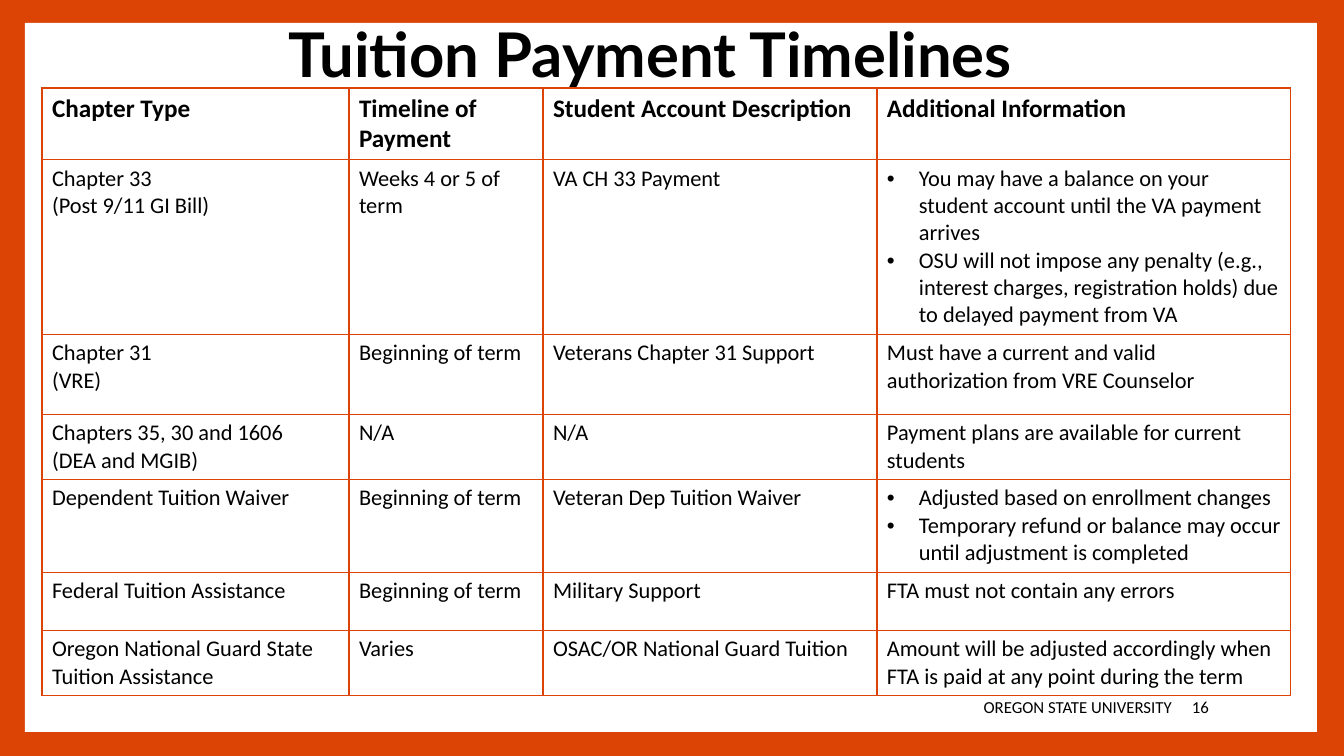
from lxml.etree import SubElement
from pptx import Presentation
from pptx.dml.color import RGBColor
from pptx.enum.shapes import MSO_SHAPE
from pptx.enum.text import MSO_ANCHOR, PP_ALIGN
from pptx.oxml.ns import qn
from pptx.util import Emu, Pt

EMU_PER_PX = 12192000 / 1344
COLORS = {"orange": "DC4405", "white": "FFFFFF", "black": "000000"}
COLUMN_WIDTHS = [307, 194, 334, 414]
ROW_HEIGHTS = [71, 175, 80, 64, 93, 58, 65]
ROWS = [
    ["Chapter Type", "Timeline of Payment", "Student Account Description", "Additional Information"],
    ["Chapter 33\n(Post 9/11 GI Bill)", "Weeks 4 or 5 of term", "VA CH 33 Payment",
     ["You may have a balance on your student account until the VA payment arrives",
      "OSU will not impose any penalty (e.g., interest charges, registration holds) "
      "due to delayed payment from VA"]],
    ["Chapter 31\n(VRE)", "Beginning of term", "Veterans Chapter 31 Support",
     "Must have a current and valid authorization from VRE Counselor"],
    ["Chapters 35, 30 and 1606\n(DEA and MGIB)", "N/A", "N/A",
     "Payment plans are available for current students"],
    ["Dependent Tuition Waiver", "Beginning of term", "Veteran Dep Tuition Waiver",
     ["Adjusted based on enrollment changes",
      "Temporary refund or balance may occur until adjustment is completed"]],
    ["Federal Tuition Assistance", "Beginning of term", "Military Support",
     "FTA must not contain any errors"],
    ["Oregon National Guard State Tuition Assistance", "Varies", "OSAC/OR National Guard Tuition",
     "Amount will be adjusted accordingly when FTA is paid at any point during the term"],
]


def px(length):
    return Emu(round(length * EMU_PER_PX))


def color(name):
    return RGBColor.from_string(COLORS[name])


def format_runs(paragraph, size, font="Calibri", bold=False):
    for run in paragraph.runs:
        run.font.name = font
        run.font.size = Pt(size)
        run.font.bold = bold
        run.font.color.rgb = color("black")


def add_bullet(paragraph):
    properties = paragraph._p.get_or_add_pPr()
    properties.set("marL", str(px(32)))
    properties.set("indent", str(-px(32)))
    SubElement(properties, qn("a:buFont"), typeface="Arial")
    SubElement(properties, qn("a:buChar"), char="•")


def add_borders(cell):
    properties = cell._tc.get_or_add_tcPr()
    for position, side in enumerate(("lnL", "lnR", "lnT", "lnB")):
        line = properties.makeelement(qn(f"a:{side}"), {"w": str(Pt(1))})
        fill = SubElement(line, qn("a:solidFill"))
        SubElement(fill, qn("a:srgbClr"), val=COLORS["orange"])
        properties.insert(position, line)


def add_frame(slide, left, top, width, height):
    slide.background.fill.solid()
    slide.background.fill.fore_color.rgb = color("orange")
    panel = slide.shapes.add_shape(MSO_SHAPE.RECTANGLE, px(left), px(top), px(width), px(height))
    panel.shadow.inherit = False
    panel.fill.solid()
    panel.fill.fore_color.rgb = color("white")
    panel.line.fill.background()
    slide.shapes._spTree.insert(2, panel._element)


def place_title(slide, left, top, width, height):
    title = slide.shapes.title
    title.left, title.top, title.width, title.height = map(px, (left, top, width, height))
    title.text_frame.text = "Tuition Payment Timelines"
    title.text_frame.vertical_anchor = MSO_ANCHOR.MIDDLE
    paragraph = title.text_frame.paragraphs[0]
    paragraph.alignment = PP_ALIGN.CENTER
    paragraph.line_spacing = 0.9
    format_runs(paragraph, 44, "Lato", True)


def fill_cell(cell, content, is_header):
    bulleted = isinstance(content, list)
    cell.text_frame.text = "\n".join(content) if bulleted else content
    cell.fill.background()
    add_borders(cell)
    for paragraph in cell.text_frame.paragraphs:
        if bulleted:
            add_bullet(paragraph)
        format_runs(paragraph, 18 if is_header else 16, bold=is_header)


def add_timeline_table(slide, left, top):
    frame = slide.shapes.add_table(len(ROWS), len(COLUMN_WIDTHS), px(left), px(top),
                                   px(sum(COLUMN_WIDTHS)), px(sum(ROW_HEIGHTS)))
    table = frame.table
    table.horz_banding = False
    for column, width in zip(table.columns, COLUMN_WIDTHS):
        column.width = px(width)
    for row_index, (row, height) in enumerate(zip(table.rows, ROW_HEIGHTS)):
        row.height = px(height)
        for cell, content in zip(row.cells, ROWS[row_index]):
            fill_cell(cell, content, row_index == 0)


def add_footer(slide, left, top, height):
    university_width, number_width = 737, 70
    parts = [
        ("OREGON STATE UNIVERSITY", left, university_width, PP_ALIGN.RIGHT),
        ("16", left + university_width, number_width, PP_ALIGN.LEFT),
    ]
    for text, part_left, width, alignment in parts:
        box = slide.shapes.add_textbox(px(part_left), px(top), px(width), px(height))
        box.text_frame.word_wrap = True
        box.text_frame.vertical_anchor = MSO_ANCHOR.MIDDLE
        box.text_frame.text = text
        paragraph = box.text_frame.paragraphs[0]
        paragraph.alignment = alignment
        format_runs(paragraph, 12)


def main():
    presentation = Presentation()
    presentation.slide_width, presentation.slide_height = px(1344), px(756)
    slide = presentation.slides.add_slide(presentation.slide_layouts[5])
    add_frame(slide, 25, 23, 1292, 709)
    place_title(slide, 71, 2, 1159, 111)
    add_timeline_table(slide, 42, 88)
    add_footer(slide, 445, 687, 40)
    presentation.save("out.pptx")


if __name__ == "__main__":
    main()
